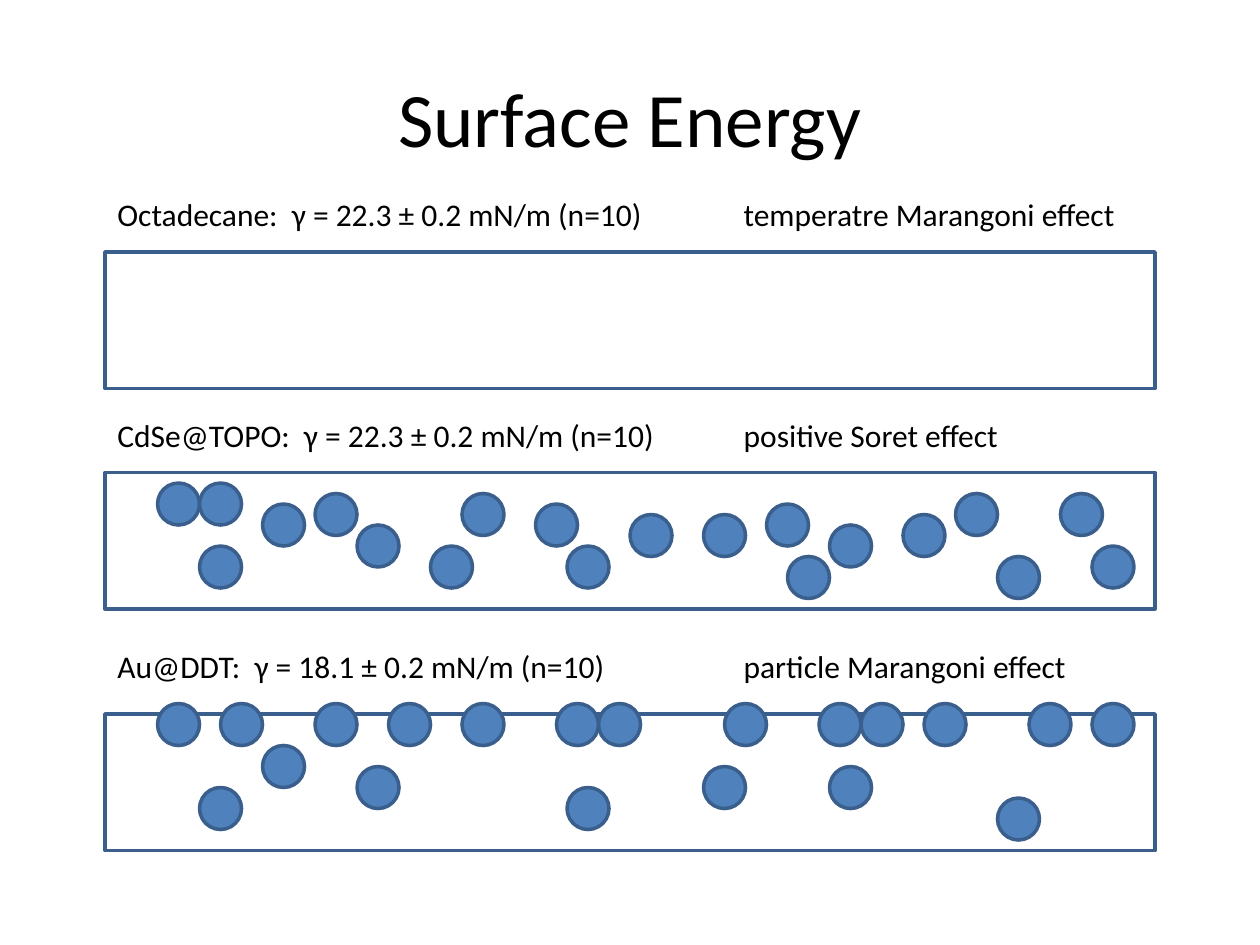
from lxml import etree
from pptx import Presentation
from pptx.dml.color import RGBColor
from pptx.enum import shapes as sh, text as tx
from pptx.oxml import ns
from pptx.util import Inches, Pt

BLACK = RGBColor(0, 0, 0)
WHITE = RGBColor(255, 255, 255)
BLUE = RGBColor(0x4F, 0x81, 0xBD)
EDGE = RGBColor(0x3A, 0x5F, 0x8C)
FONT = "Calibri"
UNIT = Inches(1) / 12
LEFT, WIDE, HIGH, DOT = 10, 100, 13, 4

# Each film: top, caption top, sample, effect, particle offsets, all in twelfths of an inch
FILMS = [
    (24, 18, "Octadecane:  γ = 22.3 ± 0.2 mN/m (n=10)",
     "temperatre Marangoni effect", []),
    (45, 39, "CdSe@TOPO:  γ = 22.3 ± 0.2 mN/m (n=10)",
     "positive Soret effect",
     [(5, 1), (15, 3), (20, 2), (31, 7), (34, 2), (9, 1), (50, 4),
      (41, 3), (63, 3), (69, 5), (24, 5), (81, 2), (44, 7), (76, 4),
      (91, 2), (94, 7), (57, 4), (9, 7), (65, 8), (85, 8)]),
    (68, 61, "Au@DDT:  γ = 18.1 ± 0.2 mN/m (n=10)",
     "particle Marangoni effect",
     [(5, -1), (15, 3), (20, -1), (27, -1), (34, -1), (11, -1), (47, -1),
      (43, -1), (59, -1), (69, 5), (24, 5), (78, -1), (44, 7), (68, -1),
      (88, -1), (94, -1), (57, 5), (9, 7), (72, -1), (85, 8)]),
]


def grid(*nums):
    return [round(n * UNIT) for n in nums]


def style(para, size):
    para.font.name = FONT
    para.font.size = Pt(size)
    para.font.color.rgb = BLACK


def add_title(slide, box):
    title = slide.shapes.title
    title.left, title.top, title.width, title.height = box
    frame = title.text_frame
    frame.text = "Surface Energy"
    frame.vertical_anchor = tx.MSO_ANCHOR.MIDDLE
    para = frame.paragraphs[0]
    para.alignment = tx.PP_ALIGN.CENTER
    style(para, 44)


def add_shape(slide, kind, box, fill):
    shape = slide.shapes.add_shape(kind, *box)
    shape.shadow.inherit = False
    shape.fill.solid()
    shape.fill.fore_color.rgb = fill
    shape.line.color.rgb = EDGE
    shape.line.width = Pt(2)


def add_label(slide, box, sample, effect):
    frame = slide.shapes.add_textbox(*box).text_frame
    frame.word_wrap = True
    para = frame.paragraphs[0]
    para.text = f"{sample}\t{effect}"
    tabs = etree.SubElement(para._p.get_or_add_pPr(), ns.qn("a:tabLst"))
    etree.SubElement(tabs, ns.qn("a:tab"), pos=str(Inches(4.97)), algn="l")
    style(para, 18)


def add_film(slide, left, top, label, sample, effect, dots):
    add_shape(slide, sh.MSO_SHAPE.RECTANGLE, grid(left, top, WIDE, HIGH), WHITE)
    for x, y in dots:
        add_shape(slide, sh.MSO_SHAPE.OVAL,
                  grid(left + x, top + y, DOT, DOT), BLUE)
    add_label(slide, grid(left, label, WIDE, 4.8), sample, effect)


def main():
    deck = Presentation()
    deck.slide_width, deck.slide_height = Inches(10), Inches(7.5)
    slide = deck.slides.add_slide(deck.slide_layouts[5])
    add_title(slide, [Inches(n) for n in (0.5, 0.3, 9, 1.25)])
    for top, label, sample, effect, dots in FILMS:
        add_film(slide, LEFT, top, label, sample, effect, dots)
    deck.save("out.pptx")


if __name__ == "__main__":
    main()
